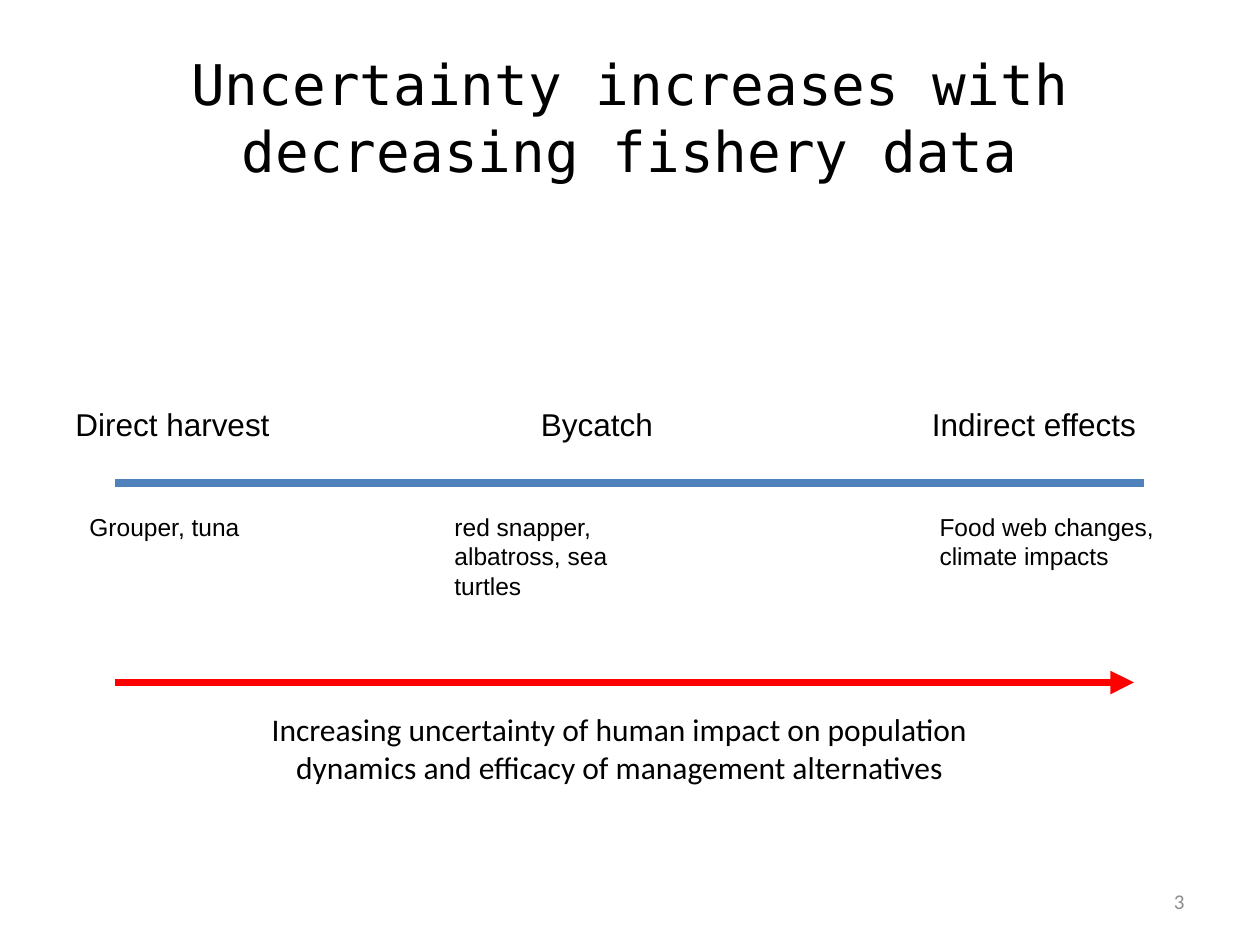
import pptx
import pptx.util
import pptx.dml.color
import pptx.enum.shapes
import pptx.enum.text
import pptx.oxml.ns
import lxml.etree

Pt = pptx.util.Pt
RGBColor = pptx.dml.color.RGBColor
ALIGN = pptx.enum.text.PP_ALIGN
ANCHOR = pptx.enum.text.MSO_ANCHOR
qn = pptx.oxml.ns.qn

BLACK = RGBColor(0x00, 0x00, 0x00)
BLUE = RGBColor(0x4F, 0x81, 0xBD)
RED = RGBColor(0xFF, 0x00, 0x00)
GREY = RGBColor(0x8C, 0x8C, 0x8C)

AXIS_LEFT = 66

# Impact type, its left edge, examples, their left edge
IMPACTS = [
    ("Direct harvest", 36, "Grouper, tuna", 44),
    ("Bycatch", 302, "red snapper, albatross, sea turtles", 252.6),
    ("Indirect effects", 525.4, "Food web changes,\nclimate impacts", 529.8),
]


def write_text(sp, text, font="Arial", size=18, color=BLACK,
               align=ALIGN.LEFT, anchor=ANCHOR.TOP, wrap=True):
    """Fill a shape with text, one paragraph per line."""
    tf = sp.text_frame
    tf.text = text
    tf.word_wrap = wrap
    tf.vertical_anchor = anchor
    for p in tf.paragraphs:
        p.alignment = align
        for r in p.runs:
            r.font.name = font
            r.font.size = Pt(size)
            r.font.color.rgb = color


def add_text(s, text, left, top, width, height, **fmt):
    sp = s.shapes.add_textbox(Pt(left), Pt(top), Pt(width), Pt(height))
    write_text(sp, text, **fmt)


def add_line(s, right, y, color, arrow=False):
    """Draw a thick horizontal line from the left end of the axis."""
    line = s.shapes.add_connector(pptx.enum.shapes.MSO_CONNECTOR.STRAIGHT,
                                  Pt(AXIS_LEFT), Pt(y), Pt(right), Pt(y))
    line.line.color.rgb = color
    line.line.width = Pt(4.5)
    if arrow:
        lxml.etree.SubElement(line.line._get_or_add_ln(), qn("a:tailEnd"),
                              type="triangle")
    lxml.etree.SubElement(line._element.spPr, qn("a:effectLst"))


def main():
    prs = pptx.Presentation()
    prs.slide_width, prs.slide_height = Pt(720), Pt(540)
    s = prs.slides.add_slide(prs.slide_layouts[5])

    # Title
    title = s.shapes.title
    title.left, title.top = Pt(36), Pt(21.6)
    title.width, title.height = Pt(648), Pt(90)
    write_text(title, "Uncertainty increases with decreasing fishery data",
               font="DejaVu Sans Mono", size=32, align=ALIGN.CENTER,
               anchor=ANCHOR.MIDDLE)

    # Axis with impact types above and examples below
    add_line(s, 654, 276, BLUE)
    for impact, impact_left, examples, examples_left in IMPACTS:
        add_text(s, impact, impact_left, 228, 133, 29, wrap=False)
        add_text(s, examples, examples_left, 289, 140, 41, size=14, wrap=False)

    # Uncertainty arrow and its caption
    add_line(s, 648, 390, RED, arrow=True)
    add_text(s, "Increasing uncertainty of human impact on population "
             "dynamics and efficacy of management alternatives",
             120, 402, 468, 51, font="Calibri", align=ALIGN.CENTER)

    # Slide number
    add_text(s, "3", 516, 500.5, 168, 28.8, font="Calibri", size=12,
             color=GREY, align=ALIGN.RIGHT, anchor=ANCHOR.MIDDLE)

    prs.save("out.pptx")


if __name__ == "__main__":
    main()
